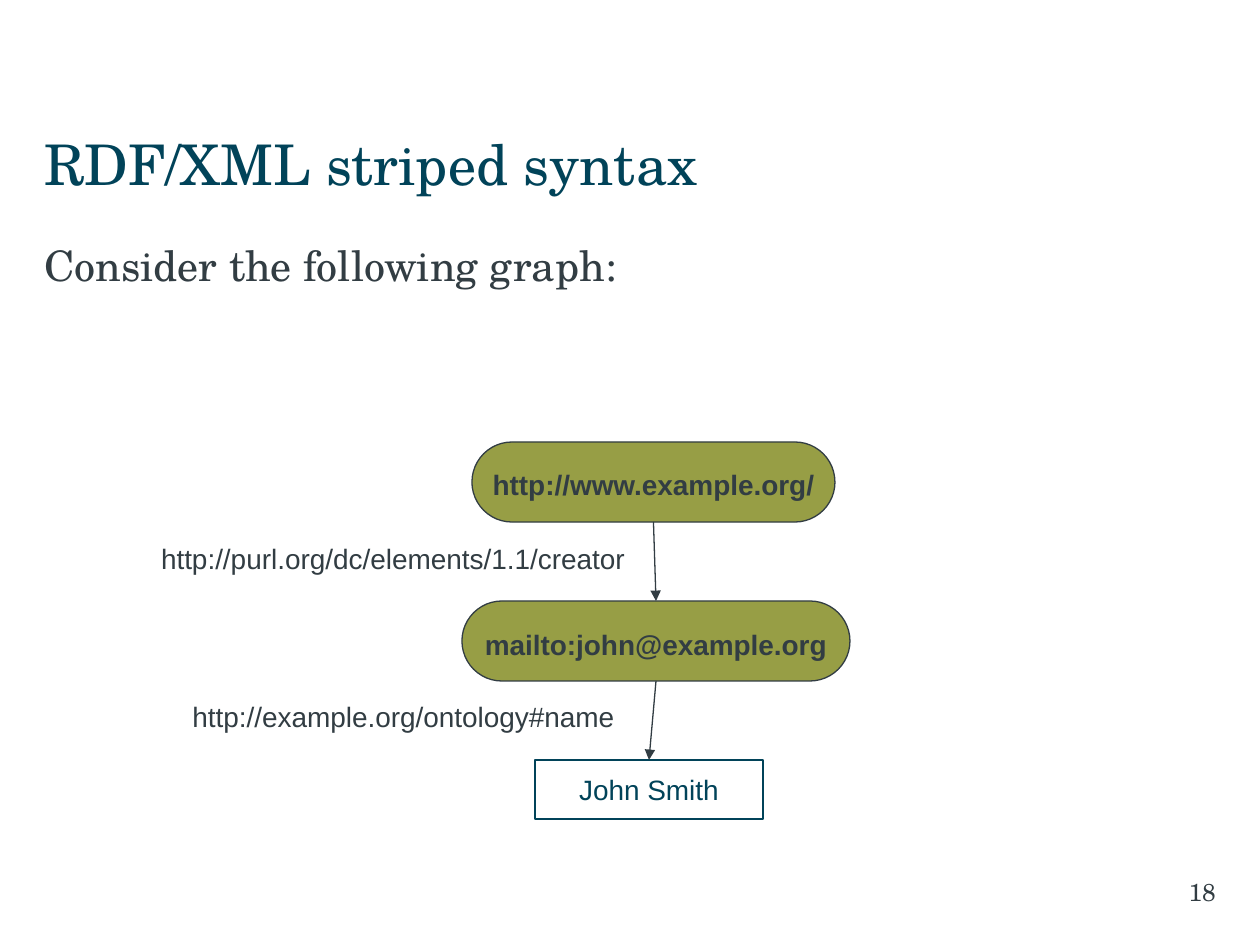
"""Build the slide on RDF/XML striped syntax with its node-and-arrow graph."""
from lxml import etree
from pptx import Presentation
from pptx import util as u
from pptx.dml.color import RGBColor
from pptx.enum import shapes, text
from pptx.oxml.ns import qn

SERIF, SANS = "TeX Gyre Schola", "Arial"
INK, TEAL, OLIVE, WHITE = "323D43", "014359", "979E45", "FFFFFF"
LEFT, CENTER, RIGHT = text.PP_ALIGN.LEFT, text.PP_ALIGN.CENTER, text.PP_ALIGN.RIGHT
TOP, MIDDLE = text.MSO_ANCHOR.TOP, text.MSO_ANCHOR.MIDDLE

TITLE = "RDF/XML striped syntax"
INTRO = "Consider the following graph:"
PAGE = "18"
RESOURCES = [
    ("http://www.example.org/", 472, 363, 324),
    ("mailto:john@example.org", 462, 388, 343),
]
LITERAL = ("John Smith", 535, 228)
PROPERTIES = [
    ("http://purl.org/dc/elements/1.1/creator ", (147, 535, 499, 47), RIGHT),
    ("http://example.org/ontology#name", (179, 693, 449, 47), CENTER),
]
GRAPH_TOP, STEP, PILL_H, LABEL_H, LABEL_DROP, LITERAL_H = 442, 159, 80, 47, 20, 59


def px(n):
    return u.Emu(round(n * 914400 / 126))


def color(value):
    return RGBColor.from_string(value)


def write(holder, words, size, font=SANS, ink=INK, bold=False, align=CENTER,
          anchor=MIDDLE, insets=(13, 13), wrap=False):
    frame = holder.text_frame
    frame.text = words
    settings = {
        "margin_left": px(insets[0]), "margin_right": px(insets[1]),
        "margin_top": px(6), "margin_bottom": px(6), "word_wrap": wrap,
        "vertical_anchor": anchor, "auto_size": text.MSO_AUTO_SIZE.NONE,
    }
    for name, value in settings.items():
        setattr(frame, name, value)
    paragraph = frame.paragraphs[0]
    paragraph.alignment = align
    letters = paragraph.runs[0].font
    for name, value in {"name": font, "size": u.Pt(size), "bold": bold}.items():
        setattr(letters, name, value)
    letters.color.rgb = color(ink)
    return paragraph


def place(holder, box):
    for name, value in zip(("left", "top", "width", "height"), box):
        setattr(holder, name, px(value))


def add_box(parent, kind, box, fill, line=None):
    box_shape = parent.add_shape(kind, *map(px, box))
    box_shape.shadow.inherit = False
    box_shape.fill.solid()
    box_shape.fill.fore_color.rgb = color(fill)
    if line:
        box_shape.line.color.rgb = color(line)
        box_shape.line.width = u.Pt(0.75)
    else:
        box_shape.line.fill.background()
    return box_shape


def add_resource(slide, words, left, width, label_width, top):
    group = slide.shapes.add_group_shape().shapes
    pill = add_box(group, shapes.MSO_SHAPE.ROUNDED_RECTANGLE,
                   (left, top, width, PILL_H), OLIVE, INK)
    pill.adjustments[0] = 0.5
    label_left = left + (width - label_width) / 2
    label = add_box(group, shapes.MSO_SHAPE.RECTANGLE,
                    (label_left, top + LABEL_DROP, label_width, LABEL_H), OLIVE)
    write(label, words, 16, bold=True, anchor=TOP, insets=(0, 0))


def add_arrow(slide, start, end):
    arrow = slide.shapes.add_connector(
        shapes.MSO_CONNECTOR.STRAIGHT, *map(px, start + end))
    arrow.line.color.rgb = color(INK)
    arrow.line.width = u.Pt(0.75)
    etree.SubElement(arrow.line._get_or_add_ln(), qn("a:tailEnd"), type="triangle")
    etree.SubElement(arrow._element.spPr, qn("a:effectLst"))


def main():
    deck = Presentation()
    deck.slide_width, deck.slide_height = u.Inches(10), u.Inches(7.5)
    slide = deck.slides.add_slide(deck.slide_layouts[1])

    title, intro = slide.placeholders
    place(title, (44, 123, 1171, 89))
    place(intro, (44, 233, 1171, 616))
    serif = {"font": SERIF, "anchor": TOP, "wrap": True}
    write(title, TITLE, 32, ink=TEAL, align=LEFT, insets=(0, 13), **serif)
    paragraph = write(intro, INTRO, 24, align=LEFT, insets=(0, 13), **serif)
    paragraph.space_before, paragraph.space_after = u.Pt(0), u.Pt(18)
    props = paragraph._p.get_or_add_pPr()
    props.set("marL", "0")
    props.set("indent", "0")
    etree.SubElement(props, qn("a:buNone"))

    tops = [GRAPH_TOP + STEP * row for row in range(3)]
    for resource, top in zip(RESOURCES, tops):
        add_resource(slide, *resource, top)
    name, left, width = LITERAL
    literal = add_box(slide.shapes, shapes.MSO_SHAPE.RECTANGLE,
                      (left, tops[-1], width, LITERAL_H), WHITE, TEAL)
    write(literal, name, 16, ink=TEAL)

    nodes = [resource[:3] for resource in RESOURCES] + [LITERAL]
    middles = [left + width / 2 for _, left, width in nodes]
    for row, (words, box, align) in enumerate(PROPERTIES):
        add_arrow(slide, (middles[row], tops[row] + PILL_H),
                  (middles[row + 1], tops[row + 1]))
        write(slide.shapes.add_textbox(*map(px, box)), words, 16, align=align)

    number = slide.shapes.add_textbox(*map(px, (974, 871, 242, 43)))
    write(number, PAGE, 14, align=RIGHT, insets=(13, 0), **serif)
    deck.save("out.pptx")


if __name__ == "__main__":
    main()
